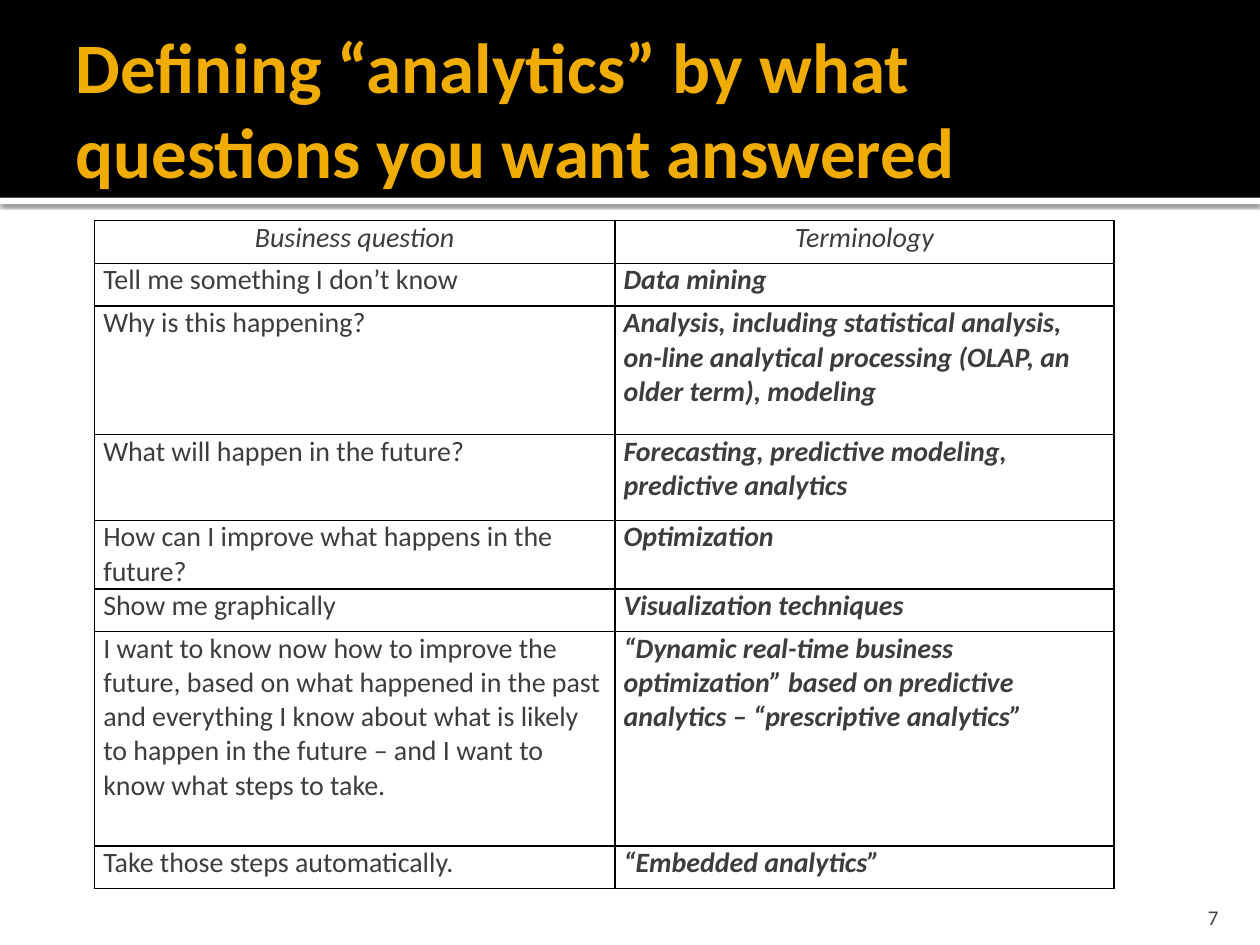
"""Build the slide that maps business questions to analytics terminology."""
from dataclasses import dataclass

from lxml.etree import SubElement
from pptx import Presentation
from pptx.dml.color import RGBColor
from pptx.enum.shapes import MSO_SHAPE
from pptx.enum.text import MSO_ANCHOR, MSO_AUTO_SIZE, PP_ALIGN
from pptx.oxml import parse_xml
from pptx.oxml.ns import nsdecls, qn
from pptx.util import Inches, Pt

TITLE = "Defining “analytics” by what questions you want answered"
PAGE = "7"
HEADER = ("Business question", "Terminology")
ROWS = [
    ("Tell me something I don’t know", "Data mining"),
    ("Why is this happening?",
     "Analysis, including statistical analysis, on-line analytical processing "
     "(OLAP, an older term), modeling"),
    ("What will happen in the future?",
     "Forecasting, predictive modeling, predictive analytics"),
    ("How can I improve what happens in the future?", "Optimization"),
    ("Show me graphically", "Visualization techniques"),
    ("I want to know now how to improve the future, based on what happened in the past "
     "and everything I know about what is likely to happen in the future – and I want "
     "to know what steps to take.",
     "“Dynamic real-time business optimization” based on predictive analytics – "
     "“prescriptive analytics”"),
    ("Take those steps automatically.", "“Embedded analytics”"),
]
COL_WIDTHS = (4.13, 3.96)
ROW_HEIGHT = 0.34
ROW_UNITS = (1, 1, 3, 2, 1, 1, 5, 1)
BAND_HEIGHT = 1.57


@dataclass(frozen=True)
class Theme:
    font: str = "Calibri"
    band: str = "000000"
    rule: str = "FFFFFF"
    title: str = "F0AD00"
    body: str = "3C3D3E"
    page: str = "454545"
    border: str = "000000"
    title_size: float = 40.5
    body_size: float = 16
    page_size: float = 12


THEME = Theme()


def style(p, size, color, align=PP_ALIGN.LEFT, bold=False, italic=False):
    p.alignment = align
    p.font.name = THEME.font
    p.font.size = Pt(size)
    p.font.color.rgb = RGBColor.from_string(color)
    p.font.bold = bold
    p.font.italic = italic


def set_frame(tf, anchor, left, top, right, bottom):
    tf.word_wrap = True
    tf.auto_size = MSO_AUTO_SIZE.NONE
    tf.vertical_anchor = anchor
    tf.margin_left, tf.margin_top = Inches(left), Inches(top)
    tf.margin_right, tf.margin_bottom = Inches(right), Inches(bottom)


def add_band(slide, top, height, color):
    sp = slide.shapes.add_shape(MSO_SHAPE.RECTANGLE, 0, Inches(top), Inches(10), Inches(height))
    sp.shadow.inherit = False
    sp.fill.solid()
    sp.fill.fore_color.rgb = RGBColor.from_string(color)
    sp.line.fill.background()
    return sp


def add_shadow(sp):
    effects = sp.element.spPr.find(qn("a:effectLst"))
    effects.append(parse_xml(
        f'<a:outerShdw {nsdecls("a")} blurRad="{Pt(2.5)}" dist="{Pt(0.8)}" dir="5400000" '
        'algn="tl" rotWithShape="0"><a:srgbClr val="000000"><a:alpha val="60000"/>'
        '</a:srgbClr></a:outerShdw>'))


def add_borders(cell):
    tc_pr = cell._tc.get_or_add_tcPr()
    for side in ("lnL", "lnR", "lnT", "lnB"):
        ln = SubElement(tc_pr, qn(f"a:{side}"), w=str(Pt(1)))
        fill = SubElement(ln, qn("a:solidFill"))
        SubElement(fill, qn("a:srgbClr"), val=THEME.border)


def fill_cell(cell, text, is_header, is_term):
    cell.margin_left = cell.margin_right = Inches(0.07)
    cell.margin_top = cell.margin_bottom = 0
    add_borders(cell)
    cell.fill.background()
    p = cell.text_frame.paragraphs[0]
    p.text = text
    p.space_after = Pt(9)
    style(p, THEME.body_size, THEME.body,
          PP_ALIGN.CENTER if is_header else PP_ALIGN.LEFT,
          bold=is_term and not is_header, italic=is_header or is_term)


def add_question_table(slide):
    rows = [HEADER, *ROWS]
    frame = slide.shapes.add_table(
        len(rows), len(HEADER), Inches(0.75), Inches(1.75),
        Inches(sum(COL_WIDTHS)), Inches(ROW_HEIGHT * sum(ROW_UNITS)))
    table = frame.table
    table.first_row = table.horz_banding = False
    for column, width in zip(table.columns, COL_WIDTHS):
        column.width = Inches(width)
    for i, (row, units) in enumerate(zip(rows, ROW_UNITS)):
        table.rows[i].height = Inches(ROW_HEIGHT * units)
        for j, text in enumerate(row):
            fill_cell(table.cell(i, j), text, i == 0, j == 1)


def place_title(slide):
    title = slide.shapes.title
    title.element.getparent().append(title.element)
    title.left, title.top = Inches(0.5), Inches(0.17)
    title.width, title.height = Inches(9), Inches(1.37)
    set_frame(title.text_frame, MSO_ANCHOR.MIDDLE, 0.1, 0.05, 0.05, 0.05)
    p = title.text_frame.paragraphs[0]
    p.text = TITLE
    style(p, THEME.title_size, THEME.title, bold=True)


def add_page_number(slide):
    box = slide.shapes.add_textbox(Inches(8.97), Inches(7.08), Inches(0.8), Inches(0.3))
    set_frame(box.text_frame, MSO_ANCHOR.BOTTOM, 0.1, 0.05, 0.1, 0)
    p = box.text_frame.paragraphs[0]
    p.text = PAGE
    style(p, THEME.page_size, THEME.page, PP_ALIGN.RIGHT)


def main():
    prs = Presentation()
    prs.slide_width, prs.slide_height = Inches(10), Inches(7.5)
    slide = prs.slides.add_slide(prs.slide_layouts[5])
    add_shadow(add_band(slide, BAND_HEIGHT, 0.05, THEME.rule))
    add_band(slide, 0, BAND_HEIGHT, THEME.band)
    place_title(slide)
    add_page_number(slide)
    add_question_table(slide)
    prs.save("out.pptx")


if __name__ == "__main__":
    main()
